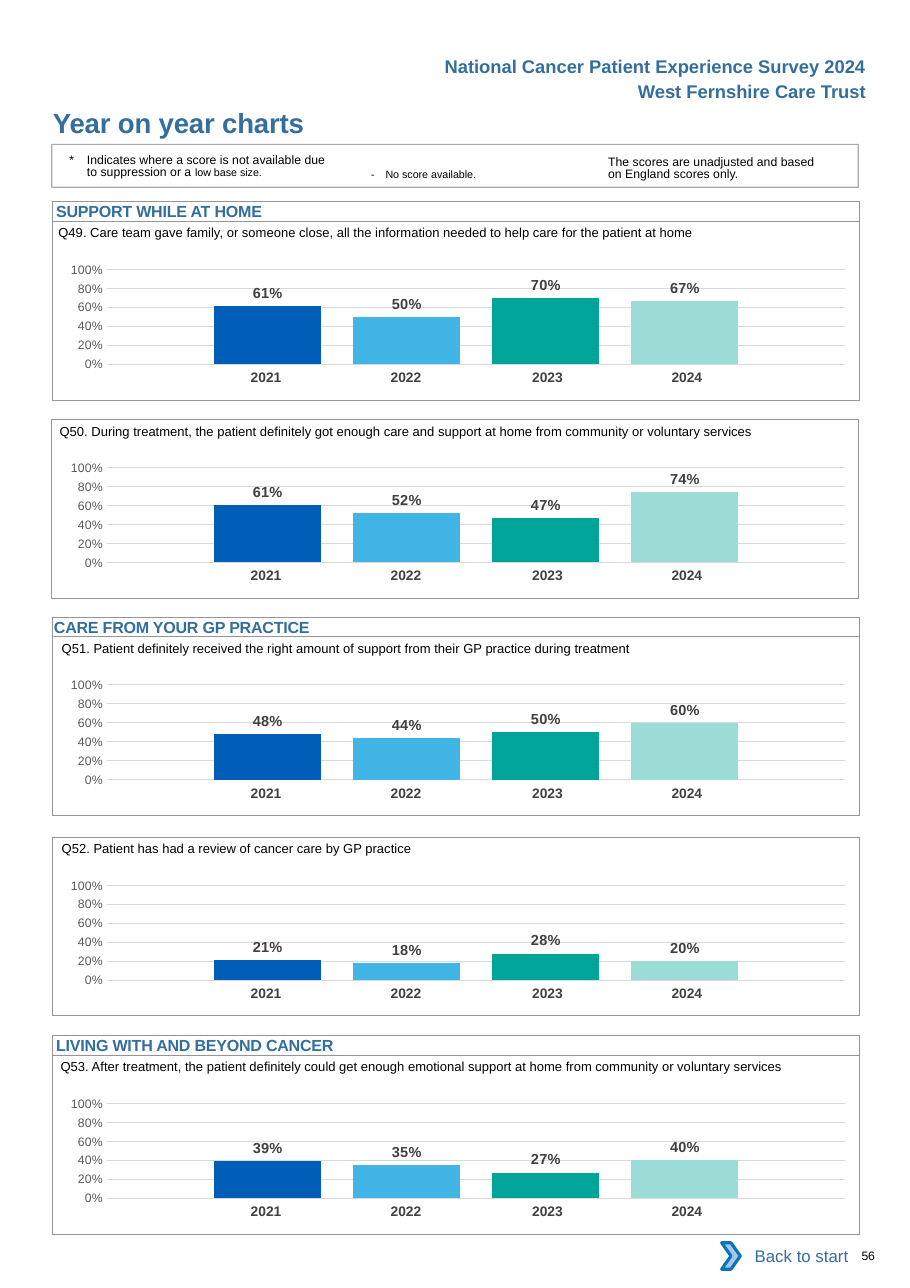
from dataclasses import dataclass

from lxml.etree import SubElement
from pptx import Presentation
from pptx.chart.data import CategoryChartData
from pptx.dml.color import RGBColor
from pptx.enum.chart import XL_CHART_TYPE as ChartType
from pptx.enum.chart import XL_LABEL_POSITION as LabelPosition
from pptx.enum.chart import XL_TICK_MARK as TickMark
from pptx.enum.shapes import MSO_SHAPE as ShapeKind
from pptx.enum.text import MSO_ANCHOR as Anchor
from pptx.enum.text import PP_ALIGN as Align
from pptx.oxml import parse_xml
from pptx.oxml.ns import nsdecls, qn
from pptx.util import Inches, Pt

COLORS = {
    "heading": "336E9F", "text": "000000", "border": "939598", "year": "414042",
    "label": "404040", "axis": "595959", "grid": "D9D9D9", "white": "FFFFFF",
    "chevron": "A8C7E9", "chevron_line": "0A74BB",
}
YEARS = {"2021": "005EB8", "2022": "41B6E6", "2023": "00A499", "2024": "9CDCD7"}
YEAR_WIDTHS = (1.27, 1.27, 1.34, 1.27)
YEAR_RIGHT_MARGINS = (0, 0, 0.04, 0.12)
PANEL_WIDTH, PANEL_HEIGHT = 7.32, 1.62
HEADING_HEIGHT = 0.18


@dataclass
class Panel:
    left: float
    top: float
    question_left: float
    question: str
    scores: tuple[float, ...]
    section: str = ""
    section_indent: float = 0.03


PANELS = (
    Panel(0.48, 2.01, 0.53, "Q49. Care team gave family, or someone close, all the information "
          "needed to help care for the patient at home", (0.61, 0.5, 0.7, 0.67),
          "SUPPORT WHILE AT HOME"),
    Panel(0.47, 3.81, 0.54, "Q50. During treatment, the patient definitely got enough care and "
          "support at home from community or voluntary services", (0.61, 0.52, 0.47, 0.74)),
    Panel(0.48, 5.78, 0.56, "Q51. Patient definitely received the right amount of support from "
          "their GP practice during treatment", (0.48, 0.44, 0.5, 0.6),
          "CARE FROM YOUR GP PRACTICE", 0.01),
    Panel(0.48, 7.6, 0.56, "Q52. Patient has had a review of cancer care by GP practice",
          (0.21, 0.18, 0.28, 0.2)),
    Panel(0.48, 9.58, 0.55, "Q53. After treatment, the patient definitely could get enough "
          "emotional support at home from community or voluntary services",
          (0.39, 0.35, 0.27, 0.4), "LIVING WITH AND BEYOND CANCER"),
)


def rgb(name: str) -> RGBColor:
    return RGBColor.from_string(COLORS.get(name, name))


def format_font(font, size: float, color: str, bold: bool = False) -> None:
    font.name, font.size, font.bold = "Arial", Pt(size), bold
    font.color.rgb = rgb(color)


def write_text(shape, text: str, *, size: float = 8, color: str = "text", bold: bool = False,
               align=Align.LEFT, anchor=Anchor.TOP, margins=(0, 0, 0, 0), hanging: float = 0,
               line_spacing: float | None = None, tail: str = "", spacing: float = 0) -> None:
    """Fill a shape with one paragraph; tail is a smaller closing run."""
    frame = shape.text_frame
    frame.word_wrap, frame.vertical_anchor = True, anchor
    (frame.margin_left, frame.margin_top,
     frame.margin_right, frame.margin_bottom) = map(Inches, margins)
    paragraph = frame.paragraphs[0]
    paragraph.alignment = align
    if line_spacing:
        paragraph.line_spacing = Pt(line_spacing)
    if hanging:
        properties = paragraph._p.get_or_add_pPr()
        properties.set("marL", str(Inches(hanging)))
        properties.set("indent", str(-Inches(hanging)))
    for words, points in ((text, size), (tail, 7)):
        if words:
            run = paragraph.add_run()
            run.text = words
            format_font(run.font, points, color, bold)
            if spacing:
                run._r.get_or_add_rPr().set("spc", str(round(spacing * 100)))


def add_text(slide, text: str, left: float, top: float, width: float, height: float,
             **text_format) -> None:
    box = slide.shapes.add_textbox(*map(Inches, (left, top, width, height)))
    write_text(box, text, **text_format)


def add_box(slide, left: float, top: float, width: float, height: float, *,
            kind=ShapeKind.RECTANGLE, fill: str = "", line: str = "border",
            line_width: float = 0.5):
    shape = slide.shapes.add_shape(kind, *map(Inches, (left, top, width, height)))
    shape.shadow.inherit = False
    if fill:
        shape.fill.solid()
        shape.fill.fore_color.rgb = rgb(fill)
    else:
        shape.fill.background()
    if line:
        shape.line.color.rgb = rgb(line)
        shape.line.width = Pt(line_width)
    else:
        shape.line.fill.background()
    return shape


def add_years(slide, top: float) -> None:
    table = slide.shapes.add_table(1, len(YEARS), Inches(1.73), Inches(top),
                                   Inches(sum(YEAR_WIDTHS)), Inches(0.27)).table
    table.first_row = table.horz_banding = False
    for column, (year, width, right) in enumerate(zip(YEARS, YEAR_WIDTHS, YEAR_RIGHT_MARGINS)):
        table.columns[column].width = Inches(width)
        cell = table.cell(0, column)
        cell.fill.background()
        cell.margin_left, cell.margin_right = Inches(0.1), Inches(right)
        cell.text = year
        paragraph = cell.text_frame.paragraphs[0]
        paragraph.alignment = Align.CENTER
        format_font(paragraph.runs[0].font, 9, "year", True)


def add_score_chart(slide, top: float, scores: tuple[float, ...]) -> None:
    data = CategoryChartData(number_format="0%")
    data.categories = ["1"]
    for number, score in enumerate(scores, 1):
        data.add_series(f"Series {number}", [score])
    chart = slide.shapes.add_chart(ChartType.COLUMN_CLUSTERED, Inches(0.39), Inches(top),
                                   Inches(7.32), Inches(1.29), data).chart
    chart.has_legend = chart.has_title = False
    chart.font.name, chart.font.size = "Calibri", Pt(10)
    chart.category_axis.visible = False

    axis = chart.value_axis
    axis.minimum_scale, axis.maximum_scale, axis.major_unit = 0, 1, 0.2
    axis.major_tick_mark = axis.minor_tick_mark = TickMark.NONE
    axis.format.line.fill.background()
    axis.major_gridlines.format.line.color.rgb = rgb("grid")
    axis.major_gridlines.format.line.width = Pt(0.75)
    axis.tick_labels.number_format, axis.tick_labels.number_format_is_linked = "0%", False
    format_font(axis.tick_labels.font, 8, "axis")

    plot = chart.plots[0]
    plot.gap_width, plot.overlap, plot.vary_by_categories = 200, -30, False
    for series, color in zip(plot.series, YEARS.values()):
        series.format.fill.solid()
        series.format.fill.fore_color.rgb = rgb(color)
        labels = series.data_labels
        labels.show_value, labels.position = True, LabelPosition.OUTSIDE_END
        labels.number_format, labels.number_format_is_linked = "0%", False
        format_font(labels.font, 9.5, "label", True)

    # Fixed inner plot area
    area = chart._chartSpace.chart.plotArea
    for old_layout in area.findall(qn("c:layout")):
        area.remove(old_layout)
    area.insert(0, parse_xml(
        f'<c:layout {nsdecls("c")}><c:manualLayout><c:layoutTarget val="inner"/>'
        '<c:xMode val="edge"/><c:yMode val="edge"/><c:x val="0.08"/><c:y val="0.145"/>'
        '<c:w val="0.915"/><c:h val="0.666"/></c:manualLayout></c:layout>'))


def add_panel(slide, panel: Panel) -> None:
    add_years(slide, panel.top + 1.3)
    add_score_chart(slide, panel.top + 0.25, panel.scores)
    add_box(slide, panel.left, panel.top, PANEL_WIDTH, PANEL_HEIGHT)
    add_text(slide, panel.question, panel.question_left, panel.top - 0.06, 7.21, 0.24,
             size=8.5, margins=(0, 0.09, 0, 0))
    if panel.section:
        heading = add_box(slide, panel.left, panel.top - HEADING_HEIGHT,
                          PANEL_WIDTH, HEADING_HEIGHT)
        write_text(heading, panel.section, size=10.5, color="heading", bold=True,
                   margins=(panel.section_indent, 0, 0, 0), spacing=-0.1)


def main() -> None:
    presentation = Presentation()
    presentation.slide_width, presentation.slide_height = Inches(8.26), Inches(11.69)
    slide = presentation.slides.add_slide(presentation.slide_layouts[5])

    # Page header and title
    for text, top in (("National Cancer Patient Experience Survey 2024", 0.45),
                      ("West Fernshire Care Trust", 0.68)):
        add_text(slide, text, 3.5, top, 4.46, 0.3, size=12, color="heading", bold=True,
                 align=Align.RIGHT, margins=(0.1, 0.05, 0.1, 0.05))
    title = slide.shapes.title
    title.left, title.top, title.width, title.height = map(Inches, (0.47, 0.96, 4.5, 0.3))
    write_text(title, "Year on year charts", size=18, color="heading", bold=True,
               margins=(0.01, 0, 0, 0), spacing=-0.1)

    # Key to the charts
    key = add_box(slide, 0.47, 1.31, PANEL_WIDTH, 0.39, line_width=0.75)
    SubElement(key.line.fill.fore_color._xFill[0], qn("a:alpha"), val="80000")
    add_text(slide, "*\tIndicates where a score is not available due to suppression or a ",
             0.63, 1.37, 2.4, 0.27, tail="low base size.", hanging=0.16, line_spacing=8.1,
             margins=(0, 0.03, 0, 0))
    add_text(slide, "-\tNo score available.", 3.37, 1.52, 1.63, 0.14, size=7, hanging=0.13)
    add_text(slide, "The scores are unadjusted and based on England scores only.",
             5.52, 1.39, 2.01, 0.27, line_spacing=8.1, margins=(0, 0.03, 0, 0))

    # Footer, behind the last panel's border
    button = add_box(slide, 6.62, 11.19, 1.18, 0.42, fill="white", line="")
    write_text(button, "Back to start", size=11, color="heading", align=Align.RIGHT,
               anchor=Anchor.MIDDLE, margins=(0.1, 0.05, 0.1, 0.05))
    add_box(slide, 6.55, 11.28, 0.17, 0.24, kind=ShapeKind.CHEVRON, fill="chevron",
            line="chevron_line", line_width=2)
    add_text(slide, "56", 7.82, 11.33, 0.41, 0.13, spacing=-0.2)

    # Question panels
    for panel in PANELS:
        add_panel(slide, panel)

    presentation.save("out.pptx")


if __name__ == "__main__":
    main()
